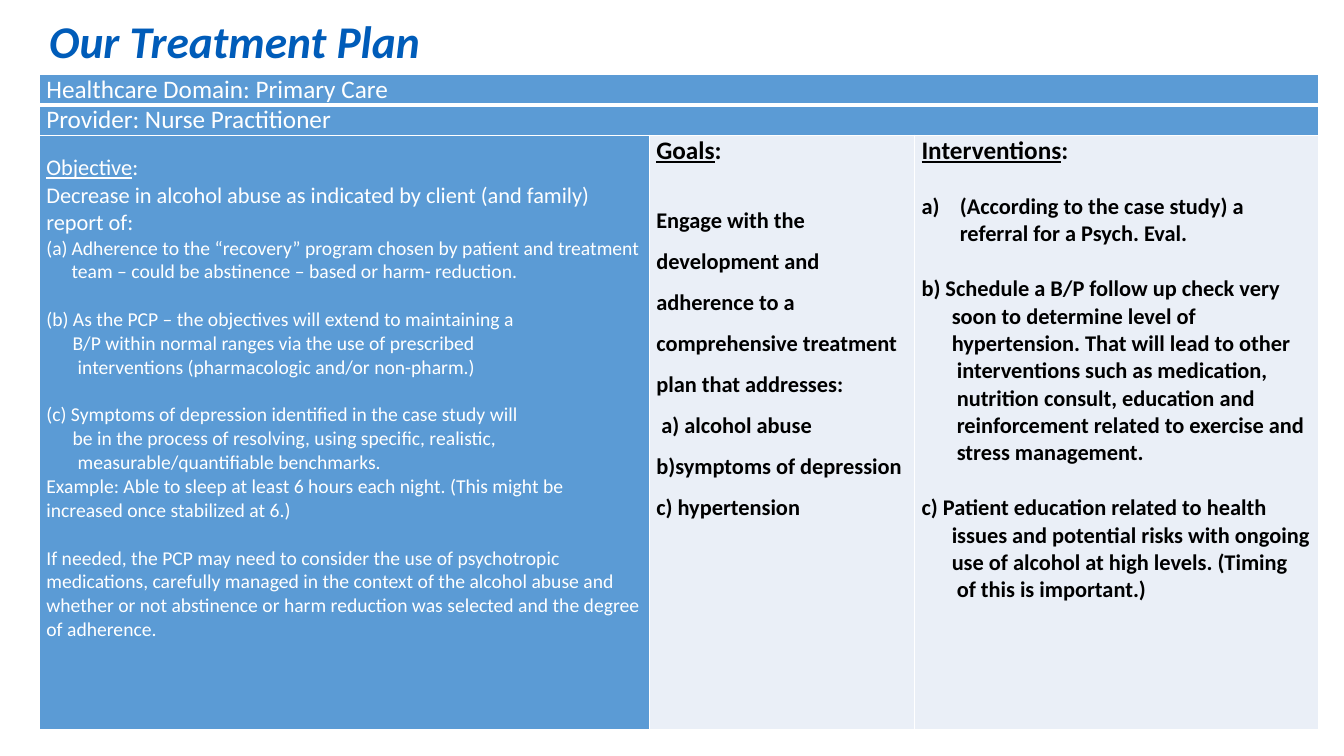
from lxml.etree import SubElement
from pptx import Presentation
from pptx.dml.color import RGBColor
from pptx.enum.text import MSO_ANCHOR
from pptx.oxml import parse_xml
from pptx.oxml.ns import nsdecls, qn
from pptx.util import Inches, Pt

TITLE_BLUE = RGBColor(0x00, 0x5C, 0xB9)
PANEL_BLUE = RGBColor(0x5B, 0x9B, 0xD5)
PANEL_PALE = RGBColor(0xEA, 0xEF, 0xF7)
WHITE = RGBColor(0xFF, 0xFF, 0xFF)
BLACK = RGBColor(0x00, 0x00, 0x00)

COLUMN_WIDTHS = (6.05, 2.63, 4.01)
ROW_HEIGHTS = (0.29, 0.29, 5.9)

OBJECTIVE_LINES = (
    ("Decrease in alcohol abuse as indicated by client (and family) report of:", dict(size=16)),
    ("Adherence to the “recovery” program chosen by patient and treatment team – "
     "could be abstinence – based or harm- reduction.",
     dict(indent=0.25, numbering="alphaLcParenBoth")),
    ("(b) As the PCP – the objectives will extend to maintaining a", dict(before=17)),
    ("B/P within normal ranges via the use of prescribed", dict(indent=0.26)),
    ("interventions (pharmacologic and/or non-pharm.)", dict(indent=0.31)),
    ("(c) Symptoms of depression identified in the case study will", dict(before=17)),
    ("be in the process of resolving, using specific, realistic,", dict(indent=0.26)),
    ("measurable/quantifiable benchmarks.", dict(indent=0.31)),
    ("Example: Able to sleep at least 6 hours each night. (This might be increased "
     "once stabilized at 6.)", {}),
    ("If needed, the PCP may need to consider the use of psychotropic medications, "
     "carefully managed in the context of the alcohol abuse and whether or not "
     "abstinence or harm reduction was selected and the degree of adherence.",
     dict(before=17)),
)
GOAL_LINES = (
    ("Engage with the development and adherence to a comprehensive treatment plan "
     "that addresses:", dict(before=19.5)),
    ("a) alcohol abuse", dict(indent=0.05)),
    ("b)symptoms of depression", {}),
    ("c) hypertension", {}),
)
INTERVENTION_LINES = (
    ("(According to the case study) a referral for a Psych. Eval.",
     dict(before=19.5, indent=0.38, numbering="alphaLcParenR")),
    ("b) Schedule a B/P follow up check very", dict(before=19.5)),
    ("soon to determine level of", dict(indent=0.3)),
    ("hypertension. That will lead to other", dict(indent=0.3)),
    ("interventions such as medication,", dict(indent=0.35)),
    ("nutrition consult, education and", dict(indent=0.35)),
    ("reinforcement related to exercise and", dict(indent=0.35)),
    ("stress management.", dict(indent=0.35)),
    ("c) Patient education related to health", dict(before=19.5)),
    ("issues and potential risks with ongoing", dict(indent=0.3)),
    ("use of alcohol at high levels. (Timing", dict(indent=0.3)),
    ("of this is important.)", dict(indent=0.35)),
)


def write(frame, text, size=14, color=WHITE, bold=False, italic=False, heading="",
          before=0, spacing=None, indent=0, numbering=None):
    first = frame.paragraphs[0]
    paragraph = frame.add_paragraph() if first.runs else first
    if indent:
        properties = paragraph._p.get_or_add_pPr()
        properties.set("marL", str(Inches(indent)))
        if numbering:
            properties.set("indent", str(-Inches(indent)))
            SubElement(properties, qn("a:buAutoNum"), type=numbering)
    if before:
        paragraph.space_before = Pt(before)
    if spacing:
        paragraph.line_spacing = spacing
    for words, underlined in ((heading, True), (text, False)):
        if words:
            run = paragraph.add_run()
            run.text = words
            run.font.name = "Calibri"
            run.font.size = Pt(size)
            run.font.color.rgb = color
            run.font.bold = bold
            run.font.italic = italic
            run.font.underline = underlined


def add_title(slide):
    title = slide.shapes.add_textbox(Inches(0.39), Inches(0.13), Inches(11.5), Inches(0.61))
    frame = title.text_frame
    frame.word_wrap = True
    frame.vertical_anchor = MSO_ANCHOR.MIDDLE
    write(frame, "Our Treatment Plan", size=32.4, color=TITLE_BLUE, bold=True,
          italic=True, spacing=0.9)


def border_cell(cell, widths):
    properties = cell._tc.get_or_add_tcPr()
    for position, (side, width) in enumerate(zip("LRTB", widths)):
        properties.insert(position, parse_xml(
            f'<a:ln{side} {nsdecls("a")} w="{Pt(width)}"><a:solidFill>'
            f'<a:srgbClr val="{WHITE}"/></a:solidFill></a:ln{side}>'))


def add_plan_table(slide):
    plan = slide.shapes.add_table(len(ROW_HEIGHTS), len(COLUMN_WIDTHS), Inches(0.39),
                                  Inches(0.74), Inches(sum(COLUMN_WIDTHS)),
                                  Inches(sum(ROW_HEIGHTS))).table
    plan.first_row = plan.horz_banding = False
    for column, width in zip(plan.columns, COLUMN_WIDTHS):
        column.width = Inches(width)
    for index, (row, height) in enumerate(zip(plan.rows, ROW_HEIGHTS)):
        row.height = Inches(height)
        for position, cell in enumerate(row.cells):
            cell.margin_left = cell.margin_right = Inches(0.07)
            cell.margin_top = cell.margin_bottom = 0
            cell.fill.solid()
            pale = index == 2 and position > 0
            cell.fill.fore_color.rgb = PANEL_PALE if pale else PANEL_BLUE
            border_cell(cell, (1, 1, 1, 3 if index == 0 else 1))
    return plan


def fill_section(cell, heading, lines, heading_size, **style):
    frame = cell.text_frame
    shared = {key: value for key, value in style.items() if key in ("color", "bold")}
    write(frame, ":", heading=heading, size=heading_size, **shared)
    for text, line_style in lines:
        write(frame, text, **{**style, **line_style})


def main():
    deck = Presentation()
    deck.slide_width, deck.slide_height = Inches(13.33), Inches(7.5)
    slide = deck.slides.add_slide(deck.slide_layouts[6])
    add_title(slide)
    plan = add_plan_table(slide)
    for row, banner in enumerate(("Healthcare Domain: Primary Care",
                                  "Provider: Nurse Practitioner")):
        plan.cell(row, 0).merge(plan.cell(row, 2))
        write(plan.cell(row, 0).text_frame, banner, size=18)
    objective, goals, interventions = plan.rows[2].cells
    objective.margin_top = Inches(0.19)
    fill_section(objective, "Objective", OBJECTIVE_LINES, 16)
    fill_section(goals, "Goals", GOAL_LINES, 18, size=16, color=BLACK, bold=True, spacing=1.5)
    fill_section(interventions, "Interventions", INTERVENTION_LINES, 18, size=16,
                 color=BLACK, bold=True)
    deck.save("out.pptx")


if __name__ == "__main__":
    main()
